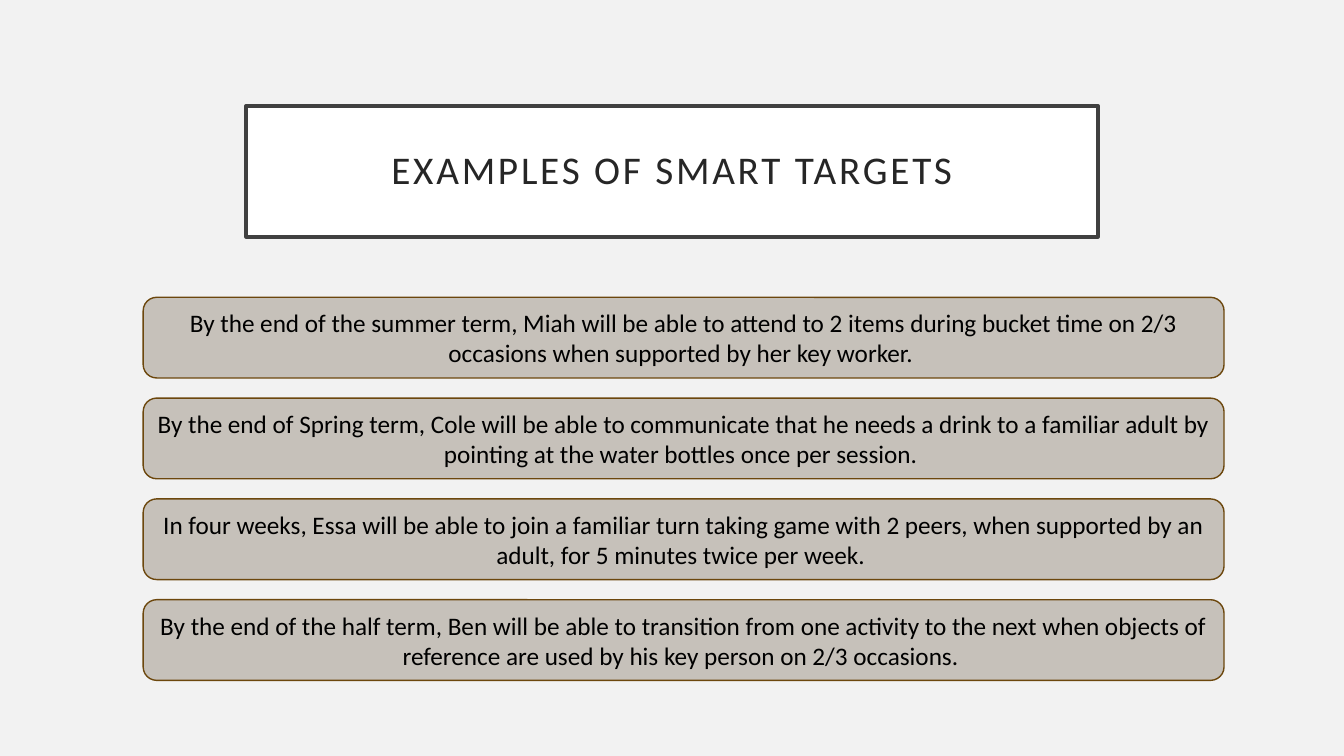
from pptx import Presentation, util as u
from pptx.dml.color import RGBColor
from pptx.enum import shapes, text as t

PX = 9144
BACKGROUND = RGBColor(0xF2, 0xF2, 0xF2)
WHITE = RGBColor(0xFF, 0xFF, 0xFF)
TITLE_LINE = RGBColor(0x40, 0x40, 0x40)
TITLE_TEXT = RGBColor(0x26, 0x26, 0x26)
TARGET_FILL = RGBColor(0xC6, 0xC1, 0xBA)
TARGET_LINE = RGBColor(0x6C, 0x47, 0x0D)
BLACK = RGBColor(0, 0, 0)

TARGETS = [
    "By the end of the summer term, Miah will be able to attend to 2 items during "
    "bucket time on 2/3 occasions when supported by her key worker. ",
    "By the end of Spring term, Cole will be able to communicate that he needs a drink "
    "to a familiar adult by pointing at the water bottles once per session. ",
    "In four weeks, Essa will be able to join a familiar turn taking game with 2 peers, "
    "when supported by an adult, for 5 minutes twice per week. ",
    "By the end of the half term, Ben will be able to transition from one activity to the "
    "next when objects of reference are used by his key person on 2/3 occasions. ",
]


def add_box(slide, kind, box, fill, line, line_width):
    shape = slide.shapes.add_shape(kind, *(length * PX for length in box))
    shape.shadow.inherit = False
    shape.fill.solid()
    shape.fill.fore_color.rgb = fill
    shape.line.color.rgb = line
    shape.line.width = u.Pt(line_width)
    return shape


def write_text(shape, content, size, color, inset=None, line_spacing=None, tracking=0):
    frame = shape.text_frame
    frame.word_wrap = True
    frame.vertical_anchor = t.MSO_ANCHOR.MIDDLE
    if inset is not None:
        frame.margin_left = frame.margin_right = inset * PX
        frame.margin_top = frame.margin_bottom = inset * PX
    paragraph = frame.paragraphs[0]
    paragraph.alignment = t.PP_ALIGN.CENTER
    paragraph.line_spacing = line_spacing
    run = paragraph.add_run()
    run.text = content
    run.font.name = "Calibri"
    run.font.size = u.Pt(size)
    run.font.color.rgb = color
    if tracking:
        run._r.get_or_add_rPr().set("spc", str(tracking * 100))


def add_title(slide, box):
    title = add_box(slide, shapes.MSO_SHAPE.RECTANGLE, box, WHITE, TITLE_LINE, 2.5)
    write_text(title, "EXAMPLES OF SMART TARGETS", 28, TITLE_TEXT,
               inset=20, line_spacing=0.9, tracking=2)


def add_targets(slide, box, gap):
    left, top, width, height = box
    bar_height = (height - gap * (len(TARGETS) - 1)) // len(TARGETS)
    for index, target in enumerate(TARGETS):
        bar_box = left, top + index * (bar_height + gap), width, bar_height
        bar = add_box(slide, shapes.MSO_SHAPE.ROUNDED_RECTANGLE, bar_box,
                      TARGET_FILL, TARGET_LINE, 1)
        write_text(bar, target, 18, BLACK)


def main():
    presentation = Presentation()
    presentation.slide_width = 1333 * PX
    presentation.slide_height = 750 * PX
    slide = presentation.slides.add_slide(presentation.slide_layouts[6])
    slide.background.fill.solid()
    slide.background.fill.fore_color.rgb = BACKGROUND
    add_title(slide, (244, 105, 845, 130))
    add_targets(slide, (142, 295, 1072, 380), gap=20)
    presentation.save("out.pptx")


if __name__ == "__main__":
    main()
